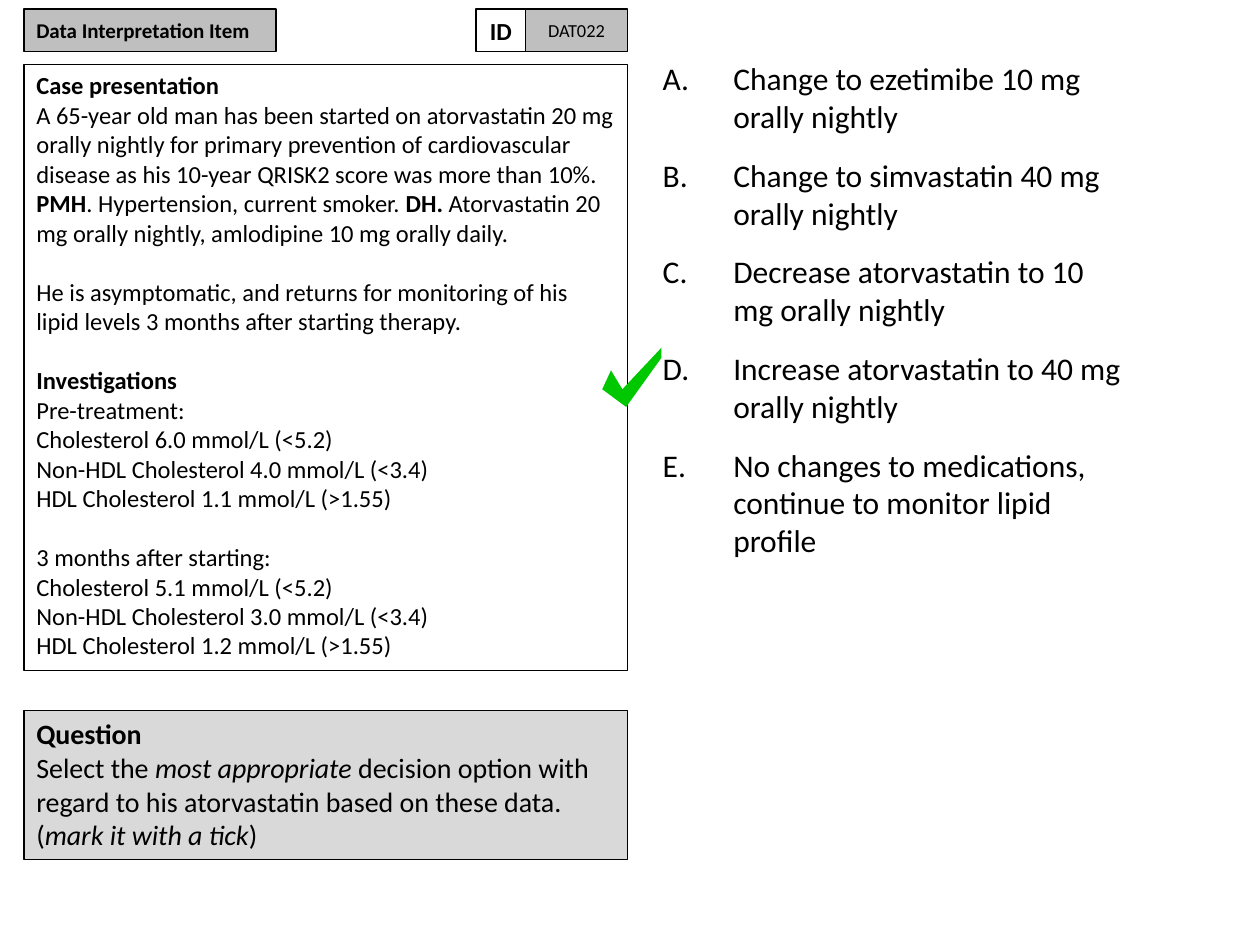
import pptx
import pptx.util
import pptx.dml.color
import pptx.enum.shapes
import pptx.enum.text
import pptx.oxml
from pptx.oxml.ns import qn

COLORS = {"ink": "000000", "label": "BFBFBF", "question": "D9D9D9", "tick": "00C800"}
FONT = "Calibri"
SLIDE_W, SLIDE_H = 10, 7.5
LEFT, RIGHT = 0.19, 4.98
HEADER_TOP, HEADER_H = 0.07, 0.34
ID_LEFT, CODE_LEFT = 3.78, 4.17
INDENT = 0.56

CASE_SECTIONS = [
    [
        [("Case presentation", "b")],
        [
            ("A 65-year old man has been started on atorvastatin 20 mg orally nightly for primary "
             "prevention of cardiovascular disease as his 10-year QRISK2 score was more than 10%. ", ""),
            ("PMH", "b"),
            (". Hypertension, current smoker. ", ""),
            ("DH. ", "b"),
            ("Atorvastatin 20 mg orally nightly, amlodipine 10 mg orally daily.", ""),
        ],
    ],
    [[("He is asymptomatic, and returns for monitoring of his lipid levels 3 months "
       "after starting therapy.", "")]],
    [
        [("Investigations", "b")],
        [("Pre-treatment:", "")],
        [("Cholesterol 6.0 mmol/L (<5.2)", "")],
        [("Non-HDL Cholesterol 4.0 mmol/L (<3.4)", "")],
        [("HDL Cholesterol 1.1 mmol/L (>1.55)", "")],
    ],
    [
        [("3 months after starting:", "")],
        [("Cholesterol 5.1 mmol/L (<5.2)", "")],
        [("Non-HDL Cholesterol 3.0 mmol/L (<3.4)", "")],
        [("HDL Cholesterol 1.2 mmol/L (>1.55)", "")],
    ],
]
QUESTION = [
    [
        [("Question", "b")],
        [("Select the ", ""), ("most appropriate ", "i"),
         ("decision option with regard to his atorvastatin based on these data.", "")],
        [("(", ""), ("mark it with a tick", "i"), (")", "")],
    ],
]
OPTIONS = [
    "Change to ezetimibe 10 mg orally nightly",
    "Change to simvastatin 40 mg orally nightly",
    "Decrease atorvastatin to 10 mg orally nightly",
    "Increase atorvastatin to 40 mg orally nightly",
    "No changes to medications, continue to monitor lipid profile",
]
TICK = [(4.85, 2.94), (4.78, 3.09), (4.97, 3.23), (5.25, 2.84), (5.25, 2.76), (4.94, 3.09)]


def rgb(name):
    return pptx.dml.color.RGBColor.from_string(COLORS[name])


def write(frame, sections, size=14, align="LEFT", anchor="TOP", gap=0, lettered=False):
    frame.word_wrap = True
    frame.vertical_anchor = getattr(pptx.enum.text.MSO_ANCHOR, anchor)
    paragraph = None
    for number, section in enumerate(sections):
        for row, runs in enumerate(section):
            paragraph = frame.add_paragraph() if paragraph is not None else frame.paragraphs[0]
            paragraph.alignment = getattr(pptx.enum.text.PP_ALIGN, align)
            starts_section = row == 0 and (number > 0 or lettered)
            paragraph.space_before = pptx.util.Pt(gap if starts_section else 0)
            if lettered:
                properties = paragraph._p.get_or_add_pPr()
                properties.set("marL", str(pptx.util.Inches(INDENT)))
                properties.set("indent", str(-pptx.util.Inches(INDENT)))
                bullet = pptx.oxml.parse_xml(
                    '<a:buAutoNum xmlns:a="http://schemas.openxmlformats.org/drawingml/2006/main"'
                    ' type="alphaUcPeriod"/>')
                properties.append(bullet)
            for words, style in runs:
                run = paragraph.add_run()
                run.text = words
                run.font.name = FONT
                run.font.size = pptx.util.Pt(size)
                run.font.bold = "b" in style
                run.font.italic = "i" in style
                run.font.color.rgb = rgb("ink")


def add_panel(slide, left, top, width, height, sections, fill=None, line=0.75, grow=False, **text):
    panel = slide.shapes.add_shape(
        pptx.enum.shapes.MSO_SHAPE.RECTANGLE,
        *(pptx.util.Inches(length) for length in (left, top, width, height)))
    panel.shadow.inherit = False
    if fill:
        panel.fill.solid()
        panel.fill.fore_color.rgb = rgb(fill)
    else:
        panel.fill.background()
    panel.line.color.rgb = rgb("ink")
    panel.line.width = pptx.util.Pt(line)
    write(panel.text_frame, sections, **text)
    if grow:
        panel.text_frame.auto_size = pptx.enum.text.MSO_AUTO_SIZE.SHAPE_TO_FIT_TEXT


def main():
    deck = pptx.Presentation()
    deck.slide_width = pptx.util.Inches(SLIDE_W)
    deck.slide_height = pptx.util.Inches(SLIDE_H)
    slide = deck.slides.add_slide(deck.slide_layouts[1])
    title = slide.shapes.title._element
    title.getparent().remove(title)

    options = slide.placeholders[1]
    options.left, options.top, options.width, options.height = (
        pptx.util.Inches(length) for length in (5.16, 0.42, 3.86, 6.28))
    write(options.text_frame, [[[(option, "")]] for option in OPTIONS],
          size=18, gap=12, lettered=True)
    options.text_frame.auto_size = pptx.enum.text.MSO_AUTO_SIZE.NONE

    headers = [
        (LEFT, 2, "Data Interpretation Item", "b", "label", 12, "LEFT"),
        (CODE_LEFT, RIGHT - CODE_LEFT, "DAT022", "", "label", 10.5, "CENTER"),
        (ID_LEFT, CODE_LEFT - ID_LEFT, "ID", "b", None, 14, "CENTER"),
    ]
    for left, width, words, style, fill, size, align in headers:
        add_panel(slide, left, HEADER_TOP, width, HEADER_H, [[[(words, style)]]],
                  fill=fill, line=1, size=size, align=align, anchor="MIDDLE")

    add_panel(slide, LEFT, 0.51, RIGHT - LEFT, 4.81, CASE_SECTIONS, grow=True, gap=17)
    add_panel(slide, LEFT, 5.64, RIGHT - LEFT, 1.18, QUESTION, fill="question", grow=True, size=16)

    points = [(pptx.util.Inches(x), pptx.util.Inches(y)) for x, y in TICK]
    outline = slide.shapes.build_freeform(*points[0])
    outline.add_line_segments(points[1:], close=True)
    tick = outline.convert_to_shape()
    tick.shadow.inherit = False
    tick.fill.solid()
    tick.fill.fore_color.rgb = rgb("tick")
    tick.line.fill.background()

    deck.save("out.pptx")


if __name__ == "__main__":
    main()
